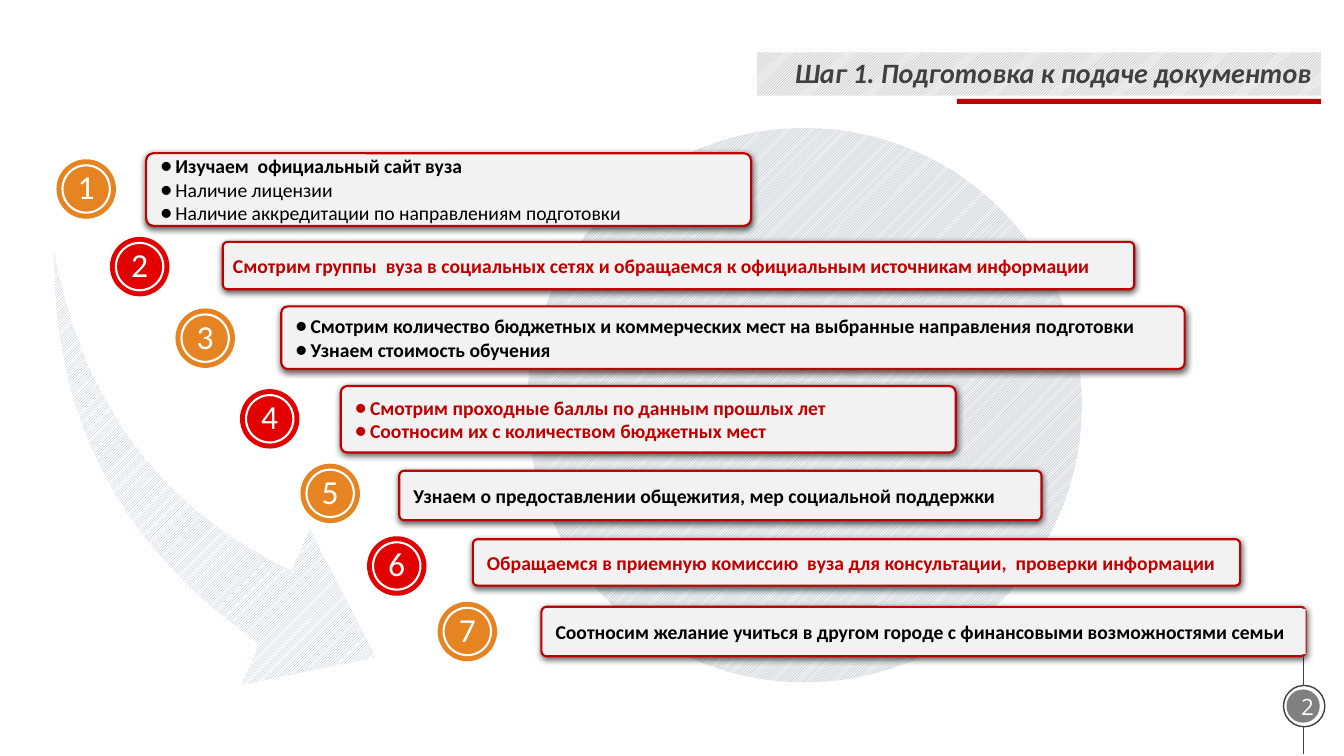
from lxml.etree import SubElement
from pptx import Presentation
from pptx.dml.color import RGBColor
from pptx.enum.dml import MSO_PATTERN
from pptx.enum.shapes import MSO_CONNECTOR, MSO_SHAPE
from pptx.enum.text import MSO_ANCHOR, MSO_AUTO_SIZE, PP_ALIGN
from pptx.oxml.ns import qn
from pptx.util import Inches, Pt

COLORS = {
    "white": "FFFFFF", "black": "000000", "panel": "F2F2F2", "crimson": "C00000",
    "red": "E20000", "orange": "E68422", "hatch": "9BADC4", "silver": "A6A6A6",
    "gray": "808080", "dark": "404040",
}

# Badge (left, top), card (left, top, width, height), text colour, bulleted, lines
STEPS = [
    ((0.56, 1.58), (1.45, 1.52, 6, 0.72), "black", True,
     [("Изучаем  официальный сайт вуза", True), ("Наличие лицензии", False),
      ("Наличие аккредитации по направлениям подготовки", False)]),
    ((1.09, 2.35), (2.21, 2.4, 9.04, 0.47), "crimson", False,
     [("Смотрим группы  вуза в социальных сетях и обращаемся к официальным "
       "источникам информации", True)]),
    ((1.74, 3.06), (2.79, 3.04, 8.96, 0.62), "black", True,
     [("Смотрим количество бюджетных и коммерческих мест на выбранные "
       "направления подготовки", True), ("Узнаем стоимость обучения", True)]),
    ((2.38, 3.86), (3.38, 3.83, 6.1, 0.66), "crimson", True,
     [("Смотрим проходные баллы по данным прошлых лет", True),
      ("Соотносим их с количеством бюджетных мест", True)]),
    ((2.98, 4.6), (3.96, 4.67, 6.37, 0.49), "black", False,
     [("Узнаем о предоставлении общежития, мер социальной поддержки", True)]),
    ((3.64, 5.32), (4.69, 5.35, 7.61, 0.46), "crimson", False,
     [("Обращаемся в приемную комиссию  вуза для консультации,  "
       "проверки информации", True)]),
    ((4.34, 5.97), (5.37, 6.02, 7.58, 0.49), "black", False,
     [("Соотносим желание учиться в другом городе с финансовыми "
       "возможностями семьи", True)]),
]


def rgb(name):
    return RGBColor.from_string(COLORS[name])


def apply(target, values):
    for name, value in values.items():
        setattr(target, name, value)


class SlideBuilder:
    font = "Calibri"

    def __init__(self, page):
        self.page = page

    def shape(self, kind, area, fill=None, line=None, width=1.5, pattern=None):
        shape = self.page.shapes.add_shape(kind, *map(Inches, area))
        shape.shadow.inherit = False
        if pattern:
            shape.fill.patterned()
            shape.fill.pattern = pattern
            shape.fill.fore_color.rgb, shape.fill.back_color.rgb = map(rgb, fill)
        elif fill:
            shape.fill.solid()
            shape.fill.fore_color.rgb = rgb(fill)
        else:
            shape.fill.background()
        if line:
            shape.line.color.rgb = rgb(line)
            shape.line.width = Pt(width)
        else:
            shape.line.fill.background()
        return shape

    def line(self, x, top, bottom):
        connector = self.page.shapes.add_connector(
            MSO_CONNECTOR.STRAIGHT, *map(Inches, (x, top, x, bottom)))
        connector.line.color.rgb = rgb("dark")
        connector.line.width = Pt(1)
        SubElement(connector.element.spPr, qn("a:effectLst"))

    def text(self, area):
        return self.page.shapes.add_textbox(*map(Inches, area))

    def span(self, para, words, size, color, font=None, **styles):
        span = para.add_run()
        span.text = words
        apply(span.font, {"name": font or self.font, "size": Pt(size), **styles})
        span.font.color.rgb = rgb(color)

    def title(self, area, words):
        box = self.page.shapes.title
        apply(box, dict(zip(("left", "top", "width", "height"), map(Inches, area))))
        apply(box.text_frame, {
            "margin_left": 0, "margin_right": 0, "margin_top": 0, "margin_bottom": 0,
            "vertical_anchor": MSO_ANCHOR.TOP, "word_wrap": True,
            "auto_size": MSO_AUTO_SIZE.NONE})
        para = box.text_frame.paragraphs[0]
        apply(para, {"alignment": PP_ALIGN.RIGHT, "line_spacing": 0.9})
        self.span(para, words, 20, "dark", bold=True, italic=True)
        # Bring the title in front of its band
        box.element.getparent().append(box.element)

    def badge(self, left, top, number, color):
        self.shape(MSO_SHAPE.OVAL, (left, top, 0.59, 0.59), color)
        self.shape(MSO_SHAPE.OVAL, (left + 0.06, top + 0.06, 0.47, 0.47), color, "white")
        box = self.text((left + 0.11, top + 0.17, 0.37, 0.38))
        box.text_frame.word_wrap = False
        para = box.text_frame.paragraphs[0]
        apply(para, {"alignment": PP_ALIGN.CENTER, "line_spacing": Pt(18)})
        self.span(para, str(number), 24, "white")

    def card(self, area, lines, color, bulleted, indent, covered):
        panel = self.shape(MSO_SHAPE.ROUNDED_RECTANGLE, area, "panel", "crimson")
        panel.adjustments[0] = 0.1
        self.drop_shadow(panel)
        left, top, width, height = area
        box = self.text((left + 0.05, top + 0.02, width - 0.05, height - 0.04))
        if covered:
            box.fill.solid()
            box.fill.fore_color.rgb = rgb("panel")
        frame = box.text_frame
        margins = ("margin_left", "margin_right", "margin_top", "margin_bottom")
        apply(frame, dict.fromkeys(margins, Inches(0.05)))
        apply(frame, {"word_wrap": True, "vertical_anchor": MSO_ANCHOR.MIDDLE})
        for index, (words, bold) in enumerate(lines):
            para = frame.add_paragraph() if index else frame.paragraphs[0]
            self.span(para, words, 14, color, bold=bold)
            self.indent(para, indent, bulleted)

    def indent(self, para, indent, bulleted):
        properties = para._p.get_or_add_pPr()
        hanging = 0.15 if bulleted else 0
        properties.set("marL", str(Inches(indent + hanging)))
        properties.set("indent", str(-Inches(hanging)))
        if bulleted:
            SubElement(properties, qn("a:buFont"), typeface=self.font)
            SubElement(properties, qn("a:buChar"), char="●")

    def drop_shadow(self, shape):
        effects = shape.element.spPr.find(qn("a:effectLst"))
        shadow = SubElement(effects, qn("a:outerShdw"), blurRad=str(Pt(4.5)),
                            dist=str(Pt(1.5)), dir="5400000", rotWithShape="0")
        color = SubElement(shadow, qn("a:srgbClr"), val=COLORS["black"])
        SubElement(color, qn("a:alpha"), val="63000")


def main():
    deck = Presentation()
    deck.slide_width, deck.slide_height = Inches(13.33), Inches(7.5)
    page = deck.slides.add_slide(deck.slide_layouts[5])
    builder = SlideBuilder(page)

    # Background disc and title band
    builder.shape(MSO_SHAPE.OVAL, (5.23, 1.27, 5.5, 5.5), ("hatch", "panel"),
                  pattern=MSO_PATTERN.DARK_UPWARD_DIAGONAL)
    builder.shape(MSO_SHAPE.RECTANGLE, (7.51, 0.52, 5.59, 0.43), ("silver", "panel"),
                  pattern=MSO_PATTERN.LIGHT_UPWARD_DIAGONAL)

    # Page number
    disc = builder.shape(MSO_SHAPE.OVAL, (12.76, 6.84, 0.33, 0.33), "gray")
    disc.text_frame.vertical_anchor = MSO_ANCHOR.MIDDLE
    number = disc.text_frame.paragraphs[0]
    number.alignment = PP_ALIGN.CENTER
    builder.span(number, "2", 16, "white", font="Open Sans")
    builder.shape(MSO_SHAPE.OVAL, (12.73, 6.8, 0.41, 0.41), line="dark", width=1)
    for top, bottom in ((6.52, 6.8), (7.21, 7.48)):
        builder.line(12.93, top, bottom)

    # Title and its underline
    builder.title((7.51, 0.59, 5.5, 0.39), "Шаг 1. Подготовка к подаче документов")
    builder.shape(MSO_SHAPE.RECTANGLE, (9.49, 0.98, 3.61, 0.05), "crimson")

    # Numbered steps
    for step, (corner, area, color, bulleted, lines) in enumerate(STEPS, 1):
        builder.badge(*corner, step, "orange" if step % 2 else "red")
        builder.card(area, lines, color, bulleted, indent=0 if step == 2 else 0.04,
                     covered=step == len(STEPS))

    # Sweeping arrow
    arrow = builder.shape(MSO_SHAPE.SWOOSH_ARROW, (-0.09, 3.03, 4.25, 3.57),
                          ("hatch", "white"), pattern=MSO_PATTERN.DARK_UPWARD_DIAGONAL)
    arrow.adjustments[0], arrow.adjustments[1] = 0.22, 0.32
    arrow.rotation = 17.3
    arrow.element.spPr.find(qn("a:xfrm")).set("flipV", "1")

    deck.save("out.pptx")


if __name__ == "__main__":
    main()
